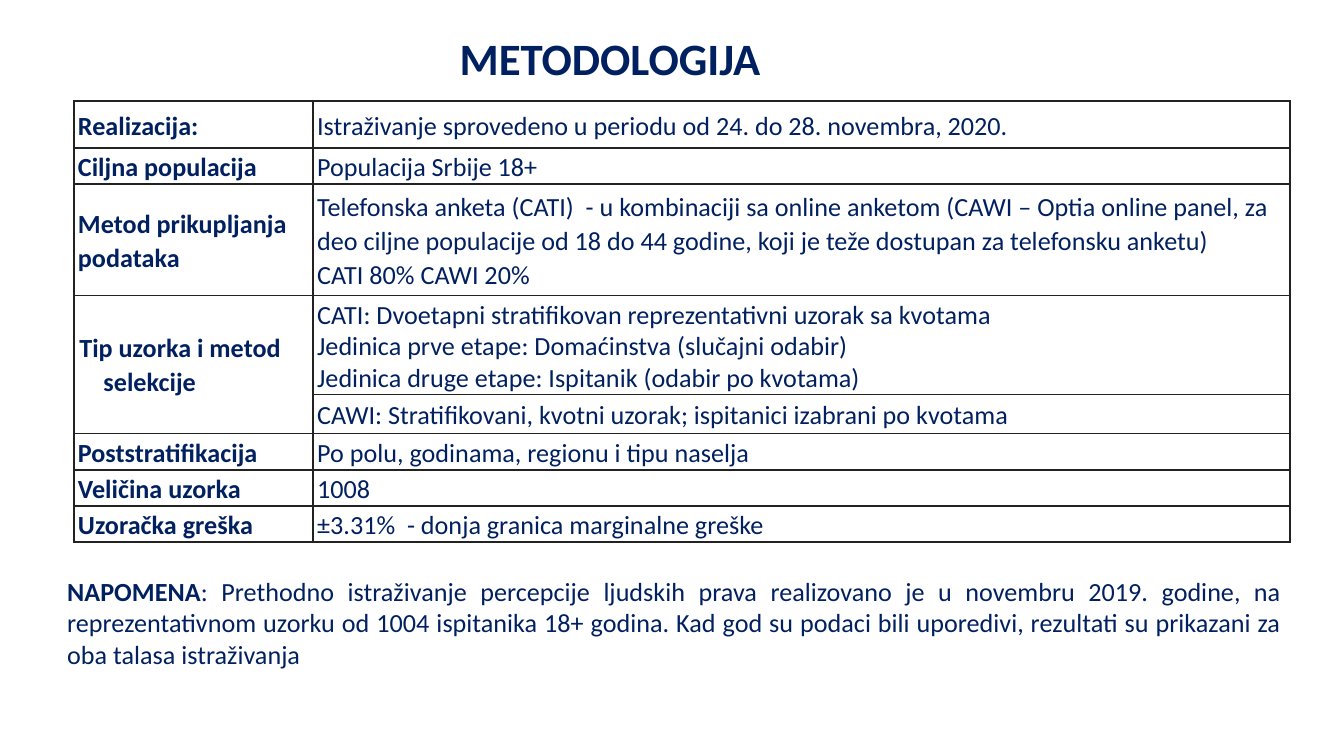
from lxml.etree import SubElement
from pptx import Presentation
from pptx.dml.color import RGBColor
from pptx.enum.text import MSO_ANCHOR, MSO_AUTO_SIZE, PP_ALIGN
from pptx.oxml.ns import qn
from pptx.util import Inches, Pt

COLORS = {"text": "002060", "background": "FFFFFF", "border": "222223"}
COLUMN_WIDTHS = [1.78, 7.27]
ROW_HEIGHTS = [0.35, 0.27, 0.83, 0.68, 0.29, 0.27, 0.27, 0.27]
METHODOLOGY = [
    ("Realizacija:", ["Istraživanje sprovedeno u periodu od 24. do 28. novembra, 2020."]),
    ("Ciljna populacija", ["Populacija Srbije 18+"]),
    ("Metod prikupljanja podataka", [
        "Telefonska anketa (CATI)  - u kombinaciji sa online anketom (CAWI – Optia online panel, "
        "za deo ciljne populacije od 18 do 44 godine, koji je teže dostupan za telefonsku anketu)",
        "CATI 80% CAWI 20%",
    ]),
    ("Tip uzorka i metod selekcije", [
        "CATI: Dvoetapni stratifikovan reprezentativni uzorak sa kvotama",
        "Jedinica prve etape: Domaćinstva (slučajni odabir)",
        "Jedinica druge etape: Ispitanik (odabir po kvotama)",
    ]),
    (None, ["CAWI: Stratifikovani, kvotni uzorak; ispitanici izabrani po kvotama"]),
    ("Poststratifikacija", ["Po polu, godinama, regionu i tipu naselja"]),
    ("Veličina uzorka", ["1008"]),
    ("Uzoračka greška", ["±3.31%  - donja granica marginalne greške"]),
]
SAMPLE_ROW = 3
NOTE = (
    ": Prethodno istraživanje percepcije ljudskih prava realizovano je u novembru 2019. godine, "
    "na reprezentativnom uzorku od 1004 ispitanika 18+ godina. Kad god su podaci bili uporedivi, "
    "rezultati su prikazani za oba talasa istraživanja"
)


def add_text(paragraph, text, size=14, bold=False, spacing=None, align=PP_ALIGN.LEFT):
    paragraph.alignment = align
    if spacing:
        paragraph.line_spacing = spacing
    run = paragraph.add_run()
    run.text = text
    run.font.name = "Calibri"
    run.font.size = Pt(size)
    run.font.bold = bold
    run.font.color.rgb = RGBColor.from_string(COLORS["text"])


def set_indent(paragraph, left, first=0):
    properties = paragraph._p.get_or_add_pPr()
    properties.set("marL", str(Inches(left)))
    properties.set("indent", str(Inches(first)))


class SlideBuilder:
    def __init__(self, slide):
        self.slide = slide

    def prepare_frame(self, frame):
        frame.margin_left = frame.margin_right = 0
        frame.margin_top = frame.margin_bottom = 0
        frame.word_wrap = True
        frame.auto_size = MSO_AUTO_SIZE.NONE

    def title(self, text, left, top, width, height):
        shape = self.slide.shapes.title
        shape.left, shape.top = Inches(left), Inches(top)
        shape.width, shape.height = Inches(width), Inches(height)
        shape.fill.solid()
        shape.fill.fore_color.rgb = RGBColor.from_string(COLORS["background"])
        frame = shape.text_frame
        self.prepare_frame(frame)
        frame.vertical_anchor = MSO_ANCHOR.MIDDLE
        paragraph = frame.paragraphs[0]
        paragraph.space_before = Pt(0)
        add_text(paragraph, text, size=24, bold=True, spacing=0.9)

    def note(self, heading, text, left, top, width, height):
        shape = self.slide.shapes.add_textbox(
            Inches(left), Inches(top), Inches(width), Inches(height))
        self.prepare_frame(shape.text_frame)
        paragraph = shape.text_frame.paragraphs[0]
        set_indent(paragraph, 0.01)
        add_text(paragraph, heading, bold=True, align=PP_ALIGN.JUSTIFY)
        add_text(paragraph, text, align=PP_ALIGN.JUSTIFY)

    def cell(self, cell, lines, bold=False):
        cell.margin_left = cell.margin_right = Inches(0.03)
        cell.margin_top, cell.margin_bottom = Inches(0.01), 0
        cell.vertical_anchor = MSO_ANCHOR.MIDDLE
        frame = cell.text_frame
        for index, line in enumerate(lines):
            paragraph = frame.add_paragraph() if index else frame.paragraphs[0]
            tight = len(lines) == 3 and index > 0
            add_text(paragraph, line, bold=bold, spacing=1.0 if tight else 1.07)
        self.borders(cell)
        cell.fill.solid()
        cell.fill.fore_color.rgb = RGBColor.from_string(COLORS["background"])

    def borders(self, cell):
        properties = cell._tc.get_or_add_tcPr()
        for side in ("a:lnL", "a:lnR", "a:lnT", "a:lnB"):
            line = SubElement(properties, qn(side), w=str(Pt(1)))
            fill = SubElement(line, qn("a:solidFill"))
            SubElement(fill, qn("a:srgbClr"), val=COLORS["border"])

    def table(self, rows, left, top):
        table = self.slide.shapes.add_table(
            len(rows), len(COLUMN_WIDTHS), Inches(left), Inches(top),
            Inches(sum(COLUMN_WIDTHS)), Inches(sum(ROW_HEIGHTS))).table
        table.first_row = table.horz_banding = False
        for column, width in zip(table.columns, COLUMN_WIDTHS):
            column.width = Inches(width)
        for index, (label, lines) in enumerate(rows):
            table.rows[index].height = Inches(ROW_HEIGHTS[index])
            self.cell(table.cell(index, 0), [label] if label else [], bold=True)
            self.cell(table.cell(index, 1), lines)
        sample = table.cell(SAMPLE_ROW, 0)
        sample.merge(table.cell(SAMPLE_ROW + 1, 0))
        sample.margin_left = sample.margin_right = sample.margin_top = 0
        set_indent(sample.text_frame.paragraphs[0], 0.22, -0.18)


def main():
    presentation = Presentation()
    presentation.slide_width = Inches(10)
    presentation.slide_height = presentation.slide_width * 9 // 16
    builder = SlideBuilder(presentation.slides.add_slide(presentation.slide_layouts[5]))
    builder.title("METODOLOGIJA", 3.42, 0.27, 2.71, 0.36)
    builder.note("NAPOMENA", NOTE, 0.49, 4.28, 9.05, 0.71)
    builder.table(METHODOLOGY, 0.55, 0.75)
    presentation.save("out.pptx")


if __name__ == "__main__":
    main()
